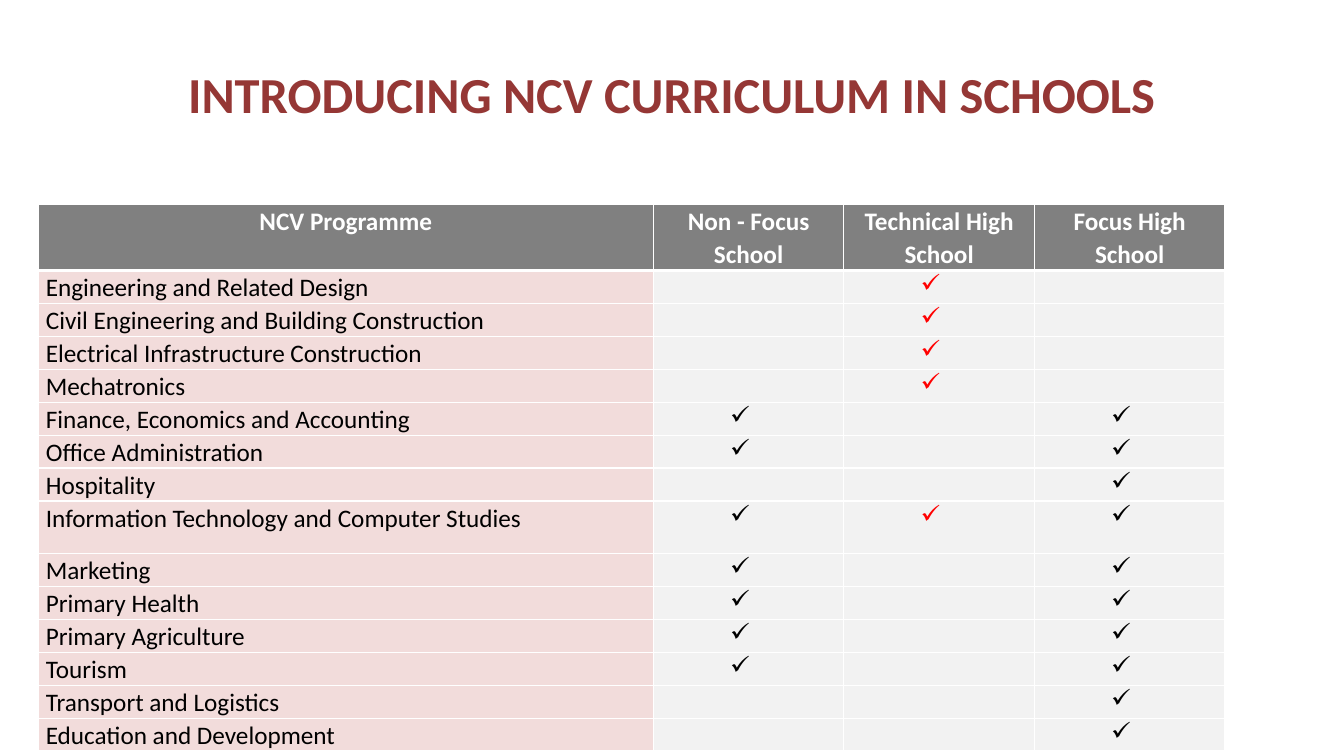
from lxml.etree import SubElement
from pptx import Presentation
from pptx.dml.color import RGBColor
from pptx.enum.text import MSO_ANCHOR, PP_ALIGN
from pptx.oxml import parse_xml
from pptx.oxml.ns import nsdecls, qn
from pptx.util import Inches, Pt

COLORS = {
    "title": "953735", "header": "808080", "white": "FFFFFF", "black": "000000",
    "programme": "F2DCDB", "mark": "F2F2F2", "technical": "FF0000",
}
FONT = "Calibri"
TICK = "✓"
TICK_INDENT = Inches(0.31)
HEADINGS = ["NCV Programme", "Non - Focus School", "Technical High School", "Focus High School"]
PROGRAMMES = [
    ("Engineering and Related Design", "T"),
    ("Civil Engineering and Building Construction", "T"),
    ("Electrical Infrastructure Construction", "T"),
    ("Mechatronics", "T"),
    ("Finance, Economics and Accounting", "NF"),
    ("Office Administration", "NF"),
    ("Hospitality", "F"),
    ("Information Technology and Computer Studies", "NTF"),
    ("Marketing", "NF"),
    ("Primary Health", "NF"),
    ("Primary Agriculture", "NF"),
    ("Tourism", "NF"),
    ("Transport and Logistics", "F"),
    ("Education and Development", "F"),
]
SCHOOLS = "NTF"
COLUMN_WIDTHS = [6.1, 1.89, 1.89, 1.89]
ROW_HEIGHT, TALL_ROW_HEIGHT = 0.3, 0.52
TALL_ROWS = {0, 8}


def color(name):
    return RGBColor.from_string(COLORS[name])


def format_paragraph(paragraph, size, font_color, bold, alignment):
    paragraph.alignment = alignment
    font = paragraph.font
    font.name, font.size, font.bold = FONT, Pt(size), bold
    font.color.rgb = color(font_color)


def add_title(slide, box):
    title = slide.shapes.title
    title.left, title.top, title.width, title.height = map(Inches, box)
    title.text_frame.text = "INTRODUCING NCV CURRICULUM IN SCHOOLS"
    title.text_frame.vertical_anchor = MSO_ANCHOR.MIDDLE
    format_paragraph(title.text_frame.paragraphs[0], 36, "title", True, PP_ALIGN.CENTER)


def fill_cell(cell, text, fill, font_color="black", bold=False, alignment=PP_ALIGN.CENTER):
    cell.fill.solid()
    cell.fill.fore_color.rgb = color(fill)
    cell.margin_left = cell.margin_right = Pt(5.4)
    cell.margin_top = cell.margin_bottom = 0
    cell.text = text
    paragraph = cell.text_frame.paragraphs[0]
    paragraph.line_spacing = 1.07
    format_paragraph(paragraph, 18, font_color, bold, alignment)


def add_bottom_border(cell, width):
    border = parse_xml(
        f'<a:lnB {nsdecls("a")} w="{Pt(width)}"><a:solidFill>'
        f'<a:srgbClr val="{COLORS["white"]}"/></a:solidFill></a:lnB>')
    cell._tc.get_or_add_tcPr().insert(0, border)


def add_tick(cell):
    paragraph = cell.text_frame.paragraphs[0]
    properties = paragraph._p.get_or_add_pPr()
    properties.set("marL", str(TICK_INDENT))
    properties.set("indent", str(-TICK_INDENT))
    bullet = SubElement(properties, qn("a:buChar"))
    bullet.set("char", TICK)
    properties.find(qn("a:defRPr")).addprevious(bullet)


def add_programme_table(slide, box):
    row_count = len(PROGRAMMES) + 1
    frame = slide.shapes.add_table(row_count, len(HEADINGS), *map(Inches, box))
    table = frame.table
    table.horz_banding = False
    for column, width in zip(table.columns, COLUMN_WIDTHS):
        column.width = Inches(width)
    for index, row in enumerate(table.rows):
        row.height = Inches(TALL_ROW_HEIGHT if index in TALL_ROWS else ROW_HEIGHT)
    for index, heading in enumerate(HEADINGS):
        cell = table.cell(0, index)
        fill_cell(cell, heading, "header", "white", True)
        add_bottom_border(cell, 3)
    for row, (programme, offered) in enumerate(PROGRAMMES, 1):
        fill_cell(table.cell(row, 0), programme, "programme", alignment=PP_ALIGN.LEFT)
        for column, school in enumerate(SCHOOLS, 1):
            cell = table.cell(row, column)
            fill_cell(cell, " ", "mark", "technical" if school == "T" else "black")
            if school in offered:
                add_tick(cell)


def main():
    presentation = Presentation()
    presentation.slide_width, presentation.slide_height = Inches(13.33), Inches(7.5)
    slide = presentation.slides.add_slide(presentation.slide_layouts[5])
    add_title(slide, (0, 0.3, 13.33, 1.25))
    add_programme_table(slide, (0.38, 2.03, sum(COLUMN_WIDTHS), 5.34))
    presentation.save("out.pptx")


if __name__ == "__main__":
    main()
